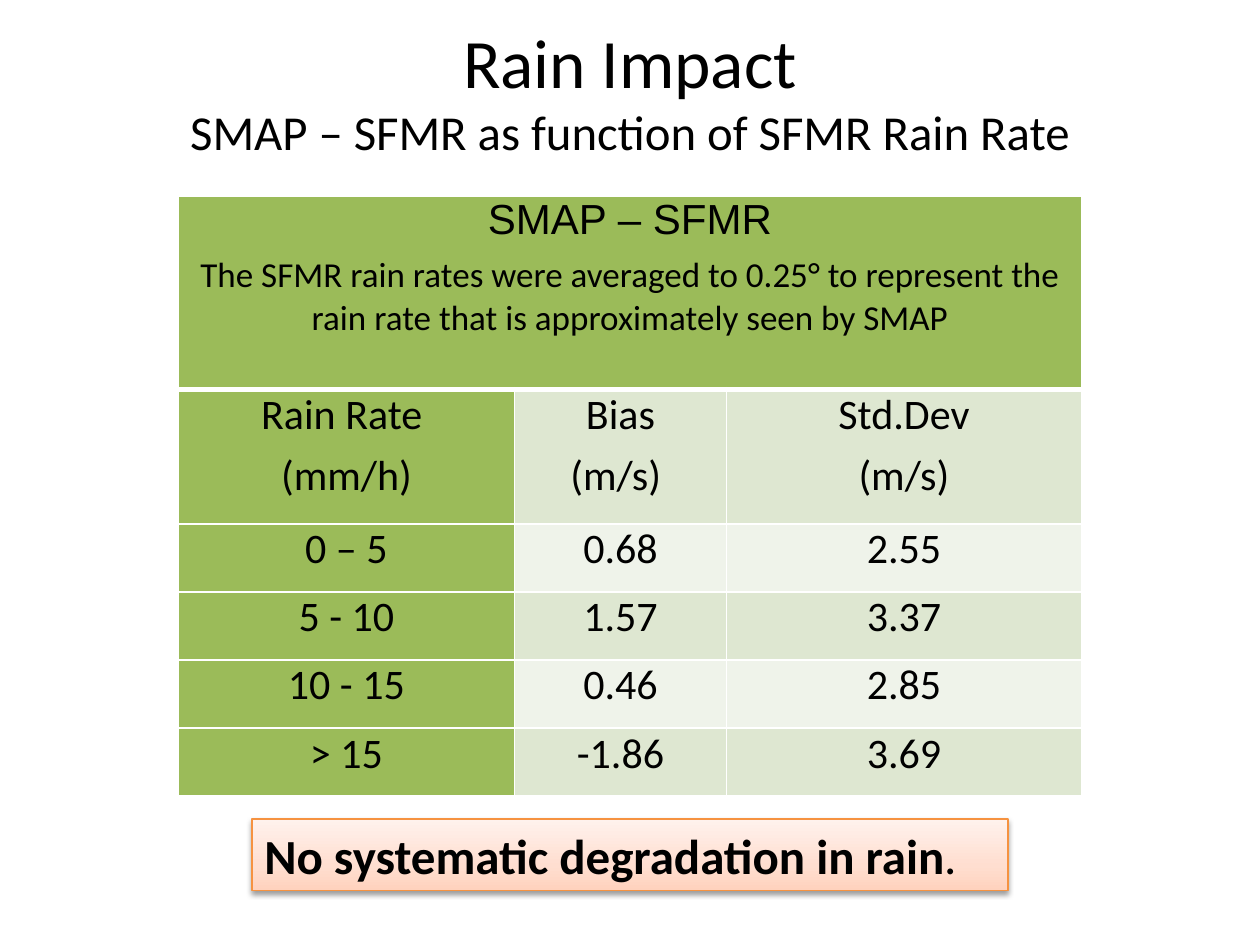
import pptx
import pptx.util
import pptx.dml.color
import pptx.enum.shapes
import pptx.enum.text
import pptx.oxml
import pptx.oxml.ns

Inches, Pt = pptx.util.Inches, pptx.util.Pt
MIDDLE = pptx.enum.text.MSO_ANCHOR.MIDDLE
CENTER = pptx.enum.text.PP_ALIGN.CENTER
NAMESPACE = pptx.oxml.ns.nsdecls("a")


def color(hex_string):
    return pptx.dml.color.RGBColor.from_string(hex_string)


def add_run(paragraph, text, size, name="Calibri", bold=False):
    run = paragraph.add_run()
    run.text = text
    for key, value in {"size": Pt(size), "name": name, "bold": bold}.items():
        setattr(run.font, key, value)
    run.font.color.rgb = color("000000")


presentation = pptx.Presentation()
presentation.slide_width, presentation.slide_height = Inches(10), Inches(7.5)
width, height = presentation.slide_width, presentation.slide_height
slide = presentation.slides.add_slide(presentation.slide_layouts[6])

title = slide.shapes.add_textbox(int(width * 0.05), int(height * 0.01), int(width * 0.9), int(height * 0.17))
for key, value in {"word_wrap": True, "vertical_anchor": MIDDLE}.items():
    setattr(title.text_frame, key, value)
paragraph = title.text_frame.paragraphs[0]
paragraph.alignment = CENTER
add_run(paragraph, "Rain Impact", 39.6)
paragraph.add_line_break()
add_run(paragraph, "SMAP – SFMR as function of SFMR Rain Rate", 27.9)

column_widths = [2.67, 1.68, 2.82]
row_heights = [1.53, 1.07] + [0.54] * 4
rows = [
    ["SMAP – SFMR\nThe SFMR rain rates were averaged to 0.25° to represent the rain rate "
     "that is approximately seen by SMAP", "", ""],
    ["Rain Rate \n(mm/h)", "Bias\n(m/s) ", "Std.Dev\n(m/s)"],
    ["0 – 5", "0.68", "2.55"],
    ["5 - 10", "1.57", "3.37"],
    ["10 - 15", "0.46", "2.85"],
    ["> 15", "-1.86", "3.69"],
]
table_width, table_height = Inches(sum(column_widths)), Inches(sum(row_heights))
table = slide.shapes.add_table(len(rows), len(column_widths), int((width - table_width) / 2),
                               Inches(1.56), table_width, table_height).table
for column, size in zip(table.columns, column_widths):
    column.width = Inches(size)
for row, size in zip(table.rows, row_heights):
    row.height = Inches(size)
table.cell(0, 0).merge(table.cell(0, 2))

cell_format = {"margin_left": Inches(0.07), "margin_right": Inches(0.07), "margin_top": 0, "margin_bottom": 0}
for row_index, row in enumerate(rows):
    for column_index, text in enumerate(row):
        cell = table.cell(row_index, column_index)
        for key, value in cell_format.items():
            setattr(cell, key, value)
        properties = cell._tc.get_or_add_tcPr()
        for side in "LRTB":
            thick = (row_index, side) in [(0, "B"), (1, "T")]
            properties.append(pptx.oxml.parse_xml(
                f'<a:ln{side} {NAMESPACE} w="{Pt(3 if thick else 1)}"><a:solidFill>'
                f'<a:srgbClr val="FFFFFF"/></a:solidFill></a:ln{side}>'))
        cell.fill.solid()
        band = "EFF3EA" if row_index % 2 == 0 else "DEE7D1"
        cell.fill.fore_color.rgb = color("9BBB59" if row_index == 0 or column_index == 0 else band)
        if not text:
            continue
        for line_index, line in enumerate(text.split("\n")):
            paragraph = cell.text_frame.paragraphs[0] if line_index == 0 else cell.text_frame.add_paragraph()
            for key, value in {"alignment": CENTER, "space_after": Pt(6)}.items():
                setattr(paragraph, key, value)
            add_run(paragraph, line, 20 if row_index == 0 and line_index else 24,
                    "Arial" if row_index == 0 and line_index == 0 else "Calibri")

conclusion = slide.shapes.add_shape(pptx.enum.shapes.MSO_SHAPE.RECTANGLE, int(width * 0.2), Inches(6.5),
                                    int(width * 0.6), Inches(0.57))
conclusion.line.color.rgb = color("F69240")
conclusion.line.width = Pt(0.75)
stops = "".join(f'<a:gs pos="{position * 1000}"><a:srgbClr val="{shade}"/></a:gs>'
                for position, shade in [(0, "FFD2BD"), (35, "FFDED0"), (100, "FFF2ED")])
outline = conclusion.line._ln
outline.addprevious(pptx.oxml.parse_xml(
    f'<a:gradFill {NAMESPACE} rotWithShape="1"><a:gsLst>{stops}</a:gsLst>'
    '<a:lin ang="16200000" scaled="0"/></a:gradFill>'))
outline.addnext(pptx.oxml.parse_xml(
    f'<a:effectLst {NAMESPACE}><a:outerShdw blurRad="{Pt(3.1)}" dist="{Pt(1.6)}" dir="5400000" '
    'rotWithShape="0"><a:srgbClr val="000000"><a:alpha val="38000"/></a:srgbClr></a:outerShdw></a:effectLst>'))
frame_format = {"word_wrap": True, "vertical_anchor": pptx.enum.text.MSO_ANCHOR.TOP,
                "auto_size": pptx.enum.text.MSO_AUTO_SIZE.SHAPE_TO_FIT_TEXT}
for key, value in frame_format.items():
    setattr(conclusion.text_frame, key, value)
paragraph = conclusion.text_frame.paragraphs[0]
paragraph.alignment = pptx.enum.text.PP_ALIGN.LEFT
add_run(paragraph, "No systematic degradation in rain", 28, bold=True)
add_run(paragraph, ".", 28)

presentation.save("out.pptx")
